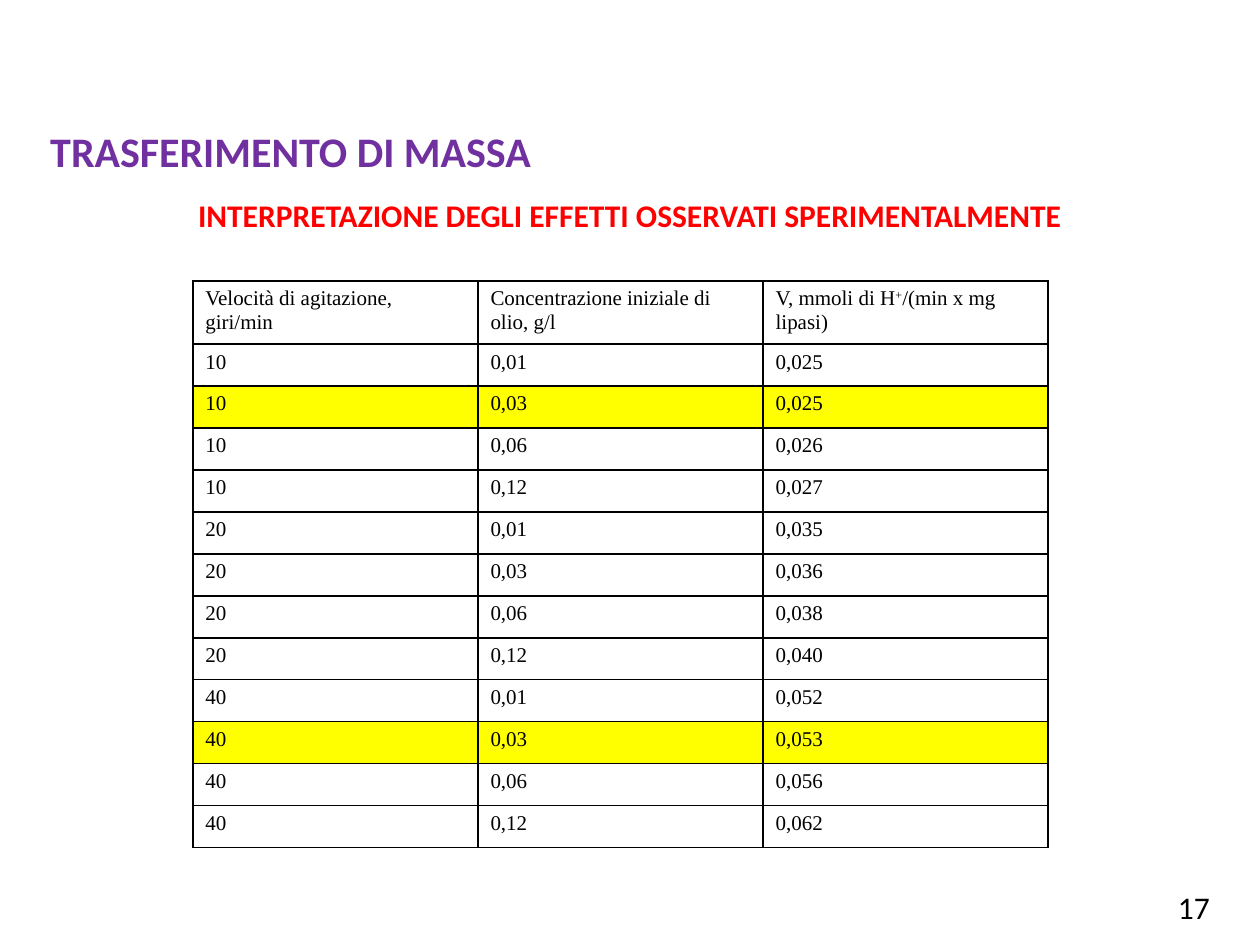
from lxml.etree import SubElement
from pptx import Presentation
from pptx.dml.color import RGBColor
from pptx.enum.text import PP_ALIGN
from pptx.oxml.ns import qn
from pptx.util import Inches, Pt

TITLE = "TRASFERIMENTO DI MASSA"
SUBTITLE = "INTERPRETAZIONE DEGLI EFFETTI OSSERVATI SPERIMENTALMENTE"
PAGE = "17"
HEADS = [
    ["Velocità di agitazione, giri/min"],
    ["Concentrazione iniziale di olio, g/l"],
    ["V, mmoli di H", "+", "/(min x mg lipasi)"],
]
OILS = ["0,01", "0,03", "0,06", "0,12"]
RATES = {
    "10": ["0,025", "0,025", "0,026", "0,027"],
    "20": ["0,035", "0,036", "0,038", "0,040"],
    "40": ["0,052", "0,053", "0,056", "0,062"],
}
MARKED = [("10", "0,03"), ("40", "0,03")]
LEFT, TOP, WIDTH, HEIGHT = 1.53, 2.23, 6.79, 4.5
HEAD = 0.5


def color(code):
    return RGBColor.from_string(code)


def write(frame, parts, size=12, font="Times New Roman", fill="000000",
          bold=False, align=PP_ALIGN.LEFT):
    line = frame.paragraphs[0]
    line.alignment = align
    for part in parts:
        run = line.add_run()
        run.text = part
        run.font.size = Pt(size)
        run.font.name = font
        run.font.bold = bold
        run.font.color.rgb = color(fill)
        if part == "+":
            run._r.get_or_add_rPr().set("baseline", "30000")


def label(slide, text, box, wrap=False, **style):
    frame = slide.shapes.add_textbox(*map(Inches, box)).text_frame
    frame.word_wrap = wrap
    write(frame, [text], font="Calibri", **style)


def border(cell):
    props = cell._tc.get_or_add_tcPr()
    for place, side in enumerate(("lnL", "lnR", "lnT", "lnB")):
        line = SubElement(props, qn("a:" + side), w=str(Pt(1)))
        solid = SubElement(line, qn("a:solidFill"))
        SubElement(solid, qn("a:srgbClr"), val="000000")
        props.insert(place, line)


def grid(slide):
    rows = [([speed], [oil], [rate])
            for speed, rates in RATES.items()
            for oil, rate in zip(OILS, rates)]
    data = [HEADS] + rows
    table = slide.shapes.add_table(
        len(data), len(HEADS), *map(Inches, (LEFT, TOP, WIDTH, HEIGHT))).table
    table.first_row = table.horz_banding = False
    for col in table.columns:
        col.width = Inches(WIDTH / len(HEADS))
    for i, row in enumerate(data):
        table.rows[i].height = Inches((HEIGHT - HEAD) / len(rows) if i else HEAD)
        marked = (row[0][0], row[1][0]) in MARKED
        for j, parts in enumerate(row):
            cell = table.cell(i, j)
            write(cell.text_frame, parts)
            if marked:
                cell.fill.solid()
                cell.fill.fore_color.rgb = color("FFFF00")
            else:
                cell.fill.background()
            border(cell)


def main():
    deck = Presentation()
    deck.slide_width, deck.slide_height = Inches(10), Inches(7.5)
    slide = deck.slides.add_slide(deck.slide_layouts[6])
    label(slide, PAGE, (9.25, 7, 0.53, 0.5), size=18)
    grid(slide)
    label(slide, SUBTITLE, (0, 1.51, 10, 0.4), wrap=True, size=18,
          fill="FF0000", bold=True, align=PP_ALIGN.CENTER)
    label(slide, TITLE, (0.3, 0.95, 4.05, 0.5), size=24,
          fill="7030A0", bold=True)
    deck.save("out.pptx")


if __name__ == "__main__":
    main()
